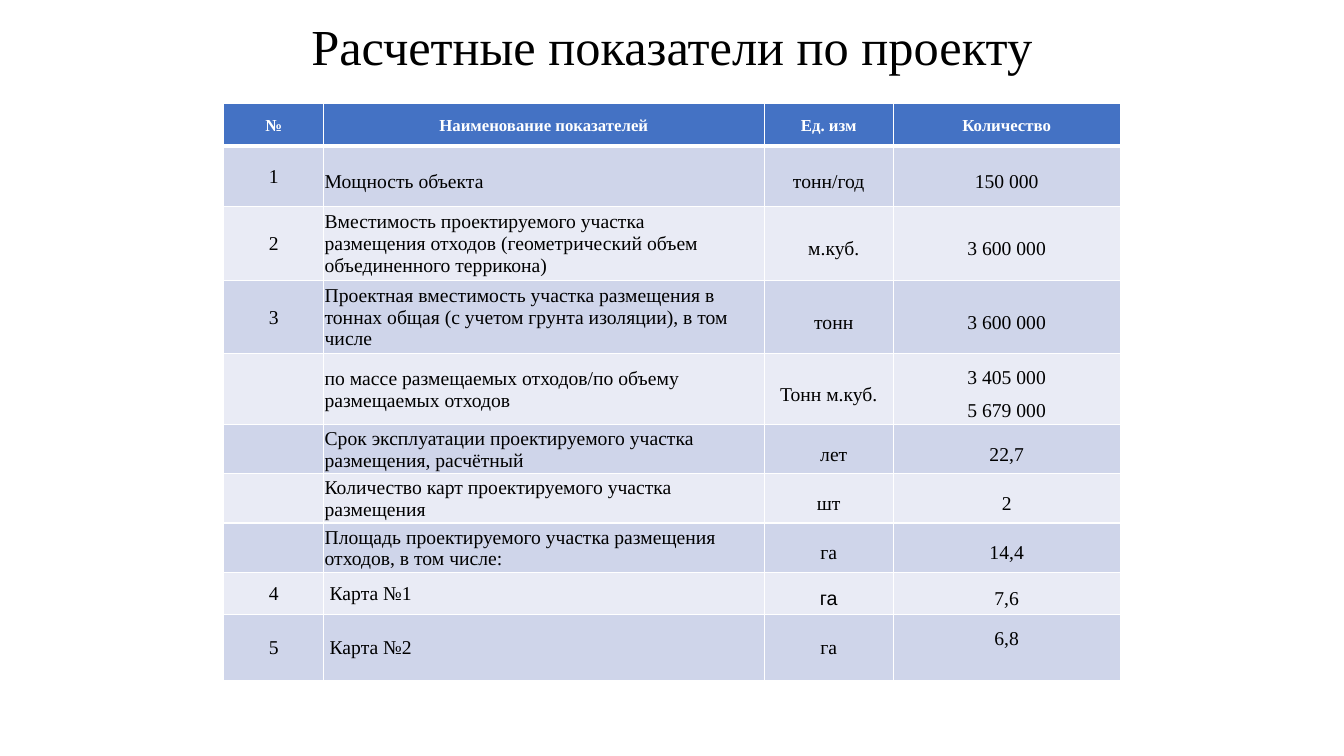
from dataclasses import dataclass

from lxml.etree import SubElement
from pptx import Presentation
from pptx.dml.color import RGBColor
from pptx.enum.text import MSO_ANCHOR, PP_ALIGN
from pptx.oxml.ns import qn
from pptx.util import Inches, Pt

HUES = {"head": "4472C4", "odd": "CFD5EA", "even": "E9EBF5", "ink": "000000", "white": "FFFFFF"}
SERIF = "Times New Roman"
WIDTHS = (0.99, 4.37, 1.28, 2.25)
HEADS = ("№", "Наименование показателей", "Ед. изм", "Количество")
TIGHT = {"margin_left": 0.01, "margin_top": 0.01, "margin_right": 0.01, "margin_bottom": 0}
WIDE = {"margin_left": 0.07, "margin_top": 0, "margin_right": 0.07, "margin_bottom": 0}


@dataclass
class Style:
    """Text look of one cell."""
    size: float = 14
    bold: bool = False
    hue: str = "ink"
    face: str = SERIF
    align: PP_ALIGN = PP_ALIGN.CENTER
    space: float = 1.0
    left: float = 0
    indent: float = 0


@dataclass
class Row:
    """One indicator of the project."""
    height: float
    number: str
    name: str
    unit: str
    amount: str
    shift: float = 0
    face: str = SERIF


ROWS = (
    Row(0.6, "1", "Мощность объекта", "тонн/год", "150 000"),
    Row(0.73, "2", "Вместимость проектируемого участка размещения отходов "
        "(геометрический объем объединенного террикона)", "м.куб.", "3 600 000", 0.1),
    Row(0.73, "3", "Проектная вместимость участка размещения в тоннах общая "
        "(с учетом грунта изоляции), в том числе", "тонн", "3 600 000", 0.1),
    Row(0.65, "", "по массе размещаемых отходов/по объему размещаемых отходов",
        "Тонн м.куб.", "3 405 000\n5 679 000"),
    Row(0.49, "", "Срок эксплуатации проектируемого участка размещения, расчётный",
        "лет", "22,7", 0.1),
    Row(0.49, "", "Количество карт проектируемого участка размещения", "шт", "2"),
    Row(0.49, "", "Площадь проектируемого участка размещения отходов, в том числе:",
        "га", "14,4"),
    Row(0.42, "4", "Карта №1", "га", "7,6", face="Arial"),
    Row(0.65, "5", "Карта №2", "га", "6,8"),
)


def tint(name: str) -> RGBColor:
    """Return a named colour."""
    return RGBColor.from_string(HUES[name])


def write(frame, text: str, style: Style) -> None:
    """Fill a text frame with styled paragraphs."""
    frame.text = text
    for para in frame.paragraphs:
        para._p.get_or_add_pPr().set("marL", str(Inches(style.left)))
        para._p.get_or_add_pPr().set("indent", str(Inches(style.indent)))
        for key, value in {"alignment": style.align, "line_spacing": style.space}.items():
            setattr(para, key, value)
        look = {"size": Pt(style.size), "bold": style.bold, "name": style.face}
        for font in [para.font] + [run.font for run in para.runs]:
            for key, value in look.items():
                setattr(font, key, value)
            font.color.rgb = tint(style.hue)


def edge(cell, side: str, width: float) -> None:
    """Draw one white border of a cell."""
    line = SubElement(cell._tc.get_or_add_tcPr(), qn(f"a:ln{side}"), w=str(Pt(width)))
    fill = SubElement(line, qn("a:solidFill"))
    SubElement(fill, qn("a:srgbClr"), val=HUES["white"])


def paint(cell, text: str, style: Style, fill: str, pads: dict, top: float, base: float) -> None:
    """Format and fill one table cell."""
    for side, width in {"L": 1, "R": 1, "T": top, "B": base}.items():
        edge(cell, side, width)
    cell.fill.solid()
    cell.fill.fore_color.rgb = tint(fill)
    cell.vertical_anchor = MSO_ANCHOR.MIDDLE
    for key, value in pads.items():
        setattr(cell, key, Inches(value))
    write(cell.text_frame, text, style)


def draw(slide) -> None:
    """Draw the table of indicators."""
    heights = [0.42] + [row.height for row in ROWS]
    table = slide.shapes.add_table(len(heights), len(WIDTHS), Inches(2.22), Inches(1.03),
                                   Inches(sum(WIDTHS)), Inches(sum(heights))).table
    for col, width in zip(table.columns, WIDTHS):
        col.width = Inches(width)
    for line, height in zip(table.rows, heights):
        line.height = Inches(height)
    for col, text in enumerate(HEADS):
        paint(table.cell(0, col), text, Style(12, True, "white"), "head", TIGHT, 1, 3)
    for pos, row in enumerate(ROWS, 1):
        first, last = pos == 1, pos == len(ROWS)
        name = Style(align=PP_ALIGN.LEFT, space=1.5 if first else 1.0,
                     left=0.05 if row.name.startswith("Карта") else 0)
        unit = Style(face=row.face, space=1.0 if last else 1.5, indent=row.shift)
        amount = Style(space=1.5, left=0.01, indent=-0.01)
        parts = (
            (row.number, Style(), TIGHT),
            (row.name, name, TIGHT | {"margin_right": 0.4 if pos == 2 else 0.01}),
            (row.unit, unit, TIGHT if last else WIDE),
            (row.amount, amount, TIGHT | {"margin_bottom": 0.28} if last else WIDE),
        )
        for col, (text, style, pads) in enumerate(parts):
            paint(table.cell(pos, col), text, style, "odd" if pos % 2 else "even", pads,
                  3 if first else 1, 1)


def main() -> None:
    """Build and save the slide."""
    deck = Presentation()
    deck.slide_width, deck.slide_height = Inches(13.33), Inches(7.5)
    slide = deck.slides.add_slide(deck.slide_layouts[6])
    title = slide.shapes.add_textbox(Inches(0.88), Inches(0.17), Inches(11.57), Inches(0.68))
    title.text_frame.word_wrap = True
    write(title.text_frame, "Расчетные показатели по проекту", Style(36, space=0.9))
    draw(slide)
    deck.save("out.pptx")


if __name__ == "__main__":
    main()
